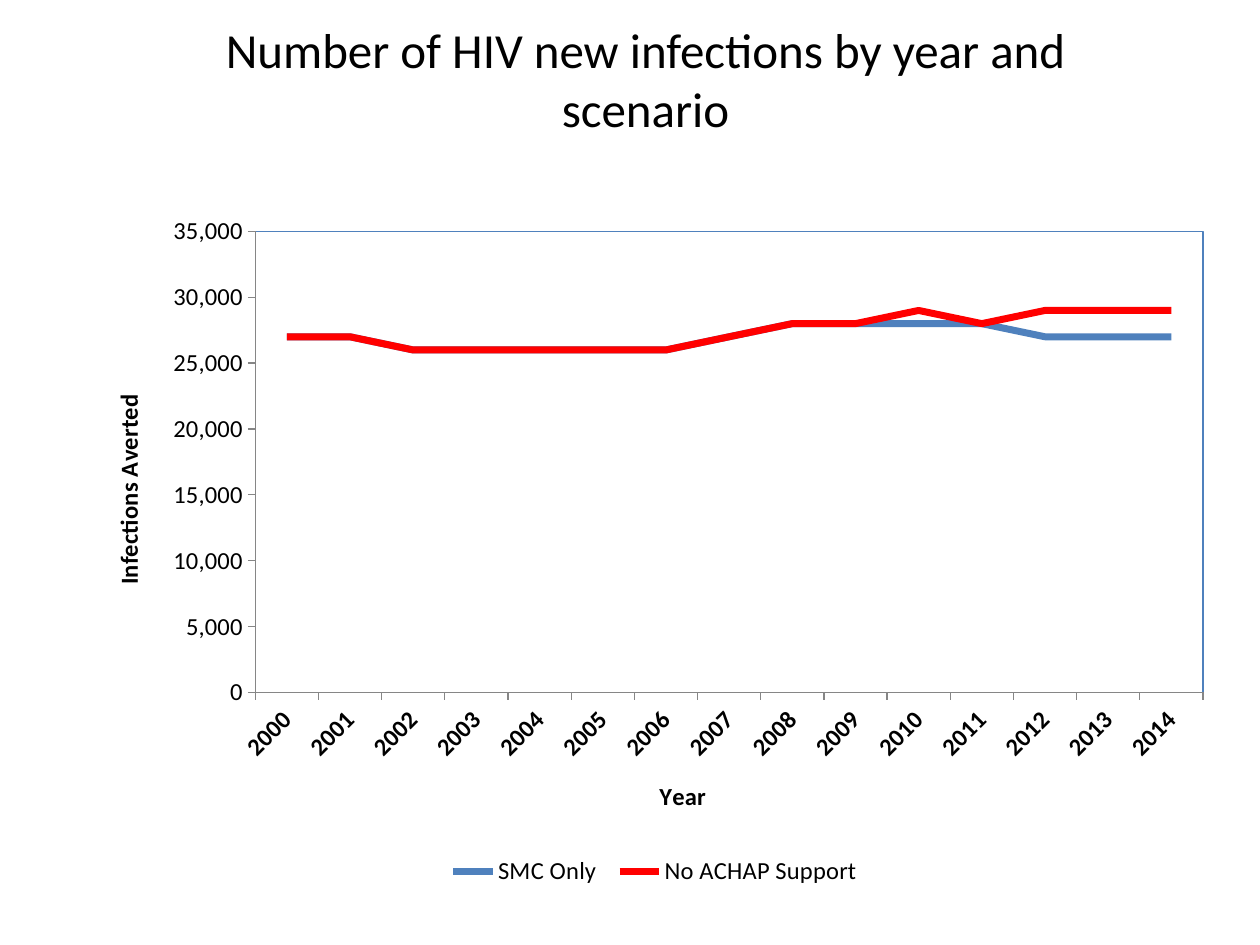
from lxml import etree
from pptx import Presentation
from pptx.chart.data import CategoryChartData
from pptx.dml.color import RGBColor
from pptx.enum.chart import XL_CHART_TYPE as ChartType
from pptx.enum.chart import XL_LEGEND_POSITION as LegendPos
from pptx.enum.chart import XL_TICK_MARK as TickMark
from pptx.enum.text import MSO_ANCHOR as Anchor
from pptx.enum.text import PP_ALIGN as Align
from pptx.oxml import parse_xml
from pptx.oxml.ns import nsdecls, qn
from pptx.util import Pt

PX = 914400 // 126
FONT = "Calibri"
COLORS = {"text": "000000", "smc": "4F81BD", "no_support": "FF0000",
          "axis": "868686", "frame": "4F81BD"}

# Both scenarios share the same figures until 2009
YEARS = [str(year) for year in range(2000, 2015)]
SHARED = [27000, 27000, 26000, 26000, 26000, 26000, 26000, 27000, 28000, 28000]
SCENARIOS = [
    ("SMC Only", "smc", SHARED + [28000, 28000, 27000, 27000, 27000]),
    ("No ACHAP Support", "no_support",
     SHARED + [29000, 28000, 29000, 29000, 29000]),
]


class SlideBuilder:
    def __init__(self, width, height):
        self.deck = Presentation()
        self.deck.slide_width, self.deck.slide_height = width * PX, height * PX
        self.slide = self.deck.slides.add_slide(self.deck.slide_layouts[6])

    def color(self, key):
        return RGBColor.from_string(COLORS[key])

    def style(self, font, size, bold=False):
        font.name, font.size, font.bold = FONT, Pt(size), bold
        font.color.rgb = self.color("text")

    def line(self, line_format, key, width):
        line_format.color.rgb = self.color(key)
        line_format.width = Pt(width)

    def heading(self, text, box, size):
        frame = self.slide.shapes.add_textbox(*[n * PX for n in box]).text_frame
        frame.word_wrap = True
        frame.vertical_anchor = Anchor.MIDDLE
        frame.paragraphs[0].alignment = Align.CENTER
        run = frame.paragraphs[0].add_run()
        run.text = text
        self.style(run.font, size)

    def place(self, element, index, target=None, **fractions):
        """Give a chart part a manual layout in fractions of the chart."""
        for old in element.findall(qn("c:layout")):
            element.remove(old)
        layout = parse_xml(f"<c:layout {nsdecls('c')}><c:manualLayout/></c:layout>")
        settings = {"layoutTarget": target} if target else {}
        settings.update(xMode="edge", yMode="edge", **fractions)
        for tag, value in settings.items():
            etree.SubElement(layout[0], qn(f"c:{tag}")).set("val", str(value))
        element.insert(index, layout)

    def axis(self, axis, title, x, y, bold=False, rotation=0):
        axis.has_major_gridlines = False
        axis.major_tick_mark = TickMark.OUTSIDE
        self.line(axis.format.line, "axis", 0.75)
        self.style(axis.tick_labels.font, 14, bold)
        frame = axis.axis_title.text_frame
        run = frame.paragraphs[0].add_run()
        run.text = title
        self.style(run.font, 14, bold=True)
        frame._txBody.find(qn("a:bodyPr")).set("rot", str(rotation * 60000))
        self.place(axis.axis_title._element, 1, x=x, y=y)

    def line_chart(self, box):
        data = CategoryChartData(number_format="#,##0")
        data.categories = YEARS
        for name, _, values in SCENARIOS:
            data.add_series(name, values)
        chart = self.slide.shapes.add_chart(
            ChartType.LINE, *[n * PX for n in box], data).chart
        chart.has_title = False
        self.style(chart.font, 14)
        chart.plots[0].vary_by_categories = False
        for series, (_, key, _) in zip(chart.plots[0].series, SCENARIOS):
            series.smooth = False
            self.line(series.format.line, key, 4)

        # Axes
        years, infections = chart.category_axis, chart.value_axis
        self.axis(years, "Year", 0.5, 0.83, bold=True)
        years._element.find(qn("c:txPr")).find(qn("a:bodyPr")).set(
            "rot", str(-45 * 60000))
        self.axis(infections, "Infections Averted", 0.02, 0.27, rotation=-90)
        infections.minimum_scale, infections.maximum_scale = 0, 35000
        infections.major_unit = 5000
        infections.tick_labels.number_format = "#,##0"
        infections.tick_labels.number_format_is_linked = False

        # Plot frame
        plot_area = chart._chartSpace.chart.plotArea
        self.place(plot_area, 0, "inner", x=0.15, y=0.04, w=0.83, h=0.67)
        plot_area.append(parse_xml(
            f'<c:spPr {nsdecls("c", "a")}><a:noFill/><a:ln w="9525"><a:solidFill>'
            f'<a:srgbClr val="{COLORS["frame"]}"/></a:solidFill></a:ln></c:spPr>'))

        # Legend
        chart.has_legend = True
        chart.legend.position = LegendPos.BOTTOM
        chart.legend.include_in_layout = False
        self.style(chart.legend.font, 14)
        self.place(chart.legend._element, 1, x=0.31, y=0.94, w=0.38, h=0.06)


def main():
    builder = SlideBuilder(1260, 945)
    builder.heading("Number of HIV new infections by year and scenario",
                    (194, 0, 903, 157), 28)
    builder.line_chart((84, 204, 1142, 688))
    builder.deck.save("out.pptx")


if __name__ == "__main__":
    main()
